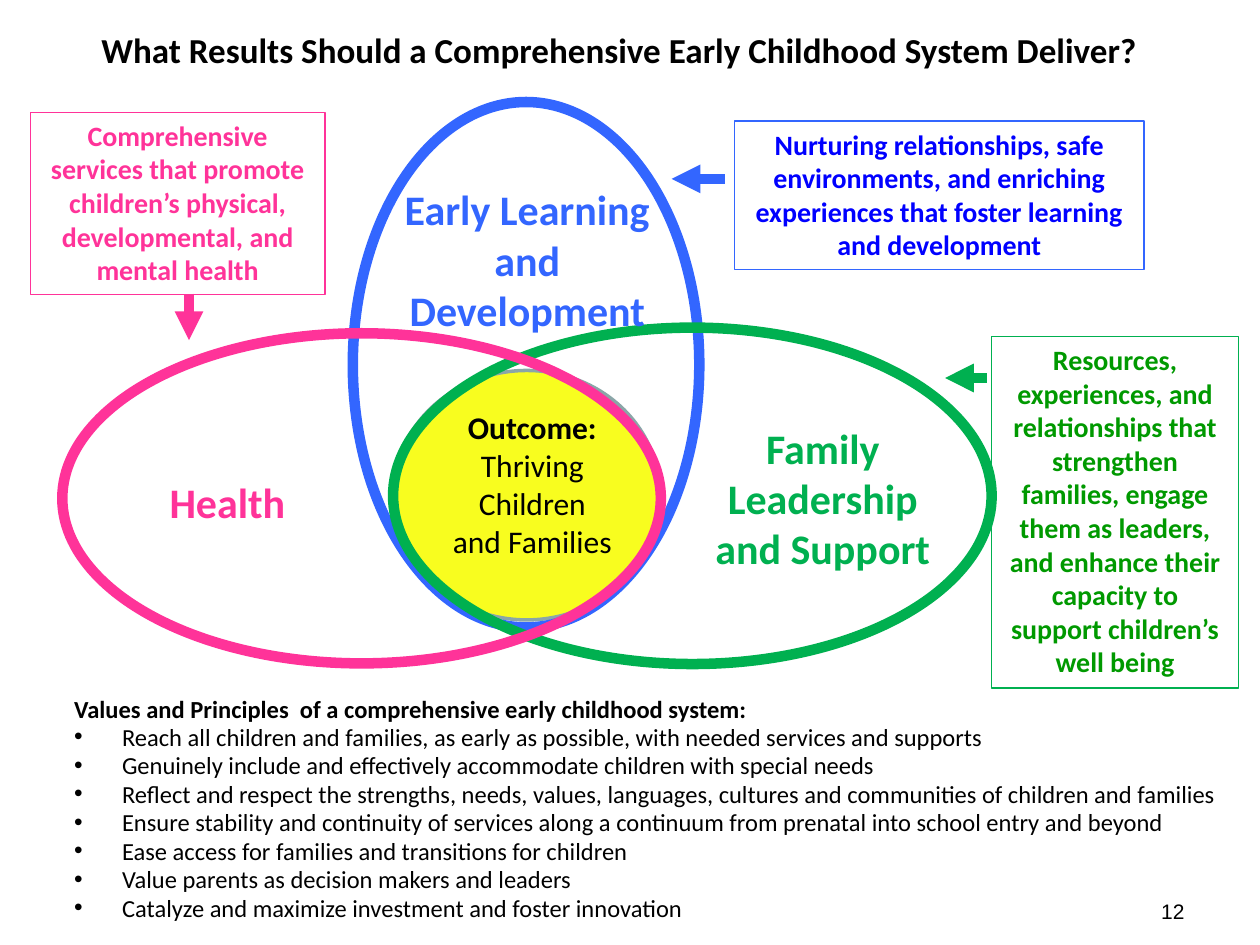
from lxml.etree import SubElement
from pptx import Presentation
from pptx.dml.color import RGBColor
from pptx.enum.shapes import MSO_CONNECTOR as Connector, MSO_SHAPE as Shape
from pptx.enum.text import MSO_ANCHOR as Anchor, PP_ALIGN as Align
from pptx.oxml.ns import qn
from pptx.util import Inches, Pt

COLORS = {
    "black": "000000", "pink": "FF3399", "blue": "3366FF", "green": "00B050",
    "deep blue": "0000FF", "deep green": "009900",
    "yellow": "F8FD1F", "gray": "8AA6A8",
}
PRINCIPLES = [
    "Reach all children and families, as early as possible, with needed services and supports",
    "Genuinely include and effectively accommodate children with special needs",
    "Reflect and respect the strengths, needs, values, languages, cultures and communities "
    "of children and families",
    "Ensure stability and continuity of services along a continuum from prenatal into "
    "school entry and beyond",
    "Ease access for families and transitions for children",
    "Value parents as decision makers and leaders",
    "Catalyze and maximize investment and foster innovation",
]


def rgb(name):
    return RGBColor.from_string(COLORS[name])


def inches(box):
    return [Inches(length) for length in box]


def write(shape, lines, size, color="black", bold=True, align=Align.CENTER,
          anchor=Anchor.TOP, font="Calibri"):
    """Fill a shape with one paragraph per line and return the paragraphs."""
    frame = shape.text_frame
    frame.word_wrap = True
    frame.vertical_anchor = anchor
    frame.text = "\n".join(lines)
    for para in frame.paragraphs:
        para.alignment = align
        para.font.name = font
        para.font.size = Pt(size)
        para.font.bold = bold
        para.font.color.rgb = rgb(color)
    return frame.paragraphs


def add_text(page, box, lines, size, **style):
    return write(page.shapes.add_textbox(*inches(box)), lines, size, **style)


def add_outline(page, kind, box, color, width, fill=None, rotation=0):
    shape = page.shapes.add_shape(kind, *inches(box))
    shape.shadow.inherit = False
    shape.rotation = rotation
    shape.line.color.rgb = rgb(color)
    shape.line.width = Pt(width)
    if fill:
        shape.fill.solid()
        shape.fill.fore_color.rgb = rgb(fill)
    else:
        shape.fill.background()
    return shape


def add_arrow(page, start, end, color):
    arrow = page.shapes.add_connector(Connector.STRAIGHT, *inches(start + end))
    arrow.line.color.rgb = rgb(color)
    arrow.line.width = Pt(5.5)
    SubElement(arrow.line._get_or_add_ln(), qn("a:tailEnd"), type="triangle")
    SubElement(arrow._element.spPr, qn("a:effectLst"))


def add_venn(page, left, top):
    """Three overlapping ellipses with their names and the shared outcome."""
    def at(x, y, width, height):
        return left + x, top + y, width, height

    add_outline(page, Shape.OVAL, at(2.63, 2.13, 2.12, 1.98), "gray", 2, fill="yellow")
    add_outline(page, Shape.OVAL, at(2.31, 0, 2.75, 4.17), "blue", 6)
    add_outline(page, Shape.OVAL, at(3.67, 0.75, 2.67, 4.75), "green", 6, rotation=270)
    add_outline(page, Shape.OVAL, at(1.07, 0.77, 2.62, 4.75), "pink", 6, rotation=270)
    for box, name, color in [
        (at(2.61, 0.6, 2.17, 1.31), "Early Learning and Development", "blue"),
        (at(0.23, 2.92, 2.17, 0.5), "Health", "pink"),
        (at(5, 2.49, 2.08, 1.31), "Family Leadership and Support", "green"),
    ]:
        add_text(page, box, [name], 24, color=color)
    outcome = add_text(page, at(1.96, 2.38, 3.55, 1.31),
                       ["Outcome:", "Thriving", "Children", "and Families"], 18, bold=False)
    outcome[0].font.bold = True


def add_callout(page, box, text, line, color, start, end):
    """A framed description with an arrow to its ellipse, offset from the box corner."""
    left, top = box[:2]
    frame = add_outline(page, Shape.RECTANGLE, box, line, 0.75)
    write(frame, [text], 16, color=color)
    add_arrow(page, (left + start[0], top + start[1]), (left + end[0], top + end[1]), line)


def add_principles(page, box):
    heading = "Values and Principles  of a comprehensive early childhood system:"
    paras = add_text(page, box, [heading] + PRINCIPLES, 14, bold=False, align=Align.LEFT)
    paras[0].font.bold = True
    for index, para in enumerate(paras):
        para.line_spacing = 0.8
        para.space_before = Pt(2.8)
        props = para._p.get_or_add_pPr()
        props.set("marL", str(Inches(0.38)))
        props.set("indent", str(-Inches(0.38)))
        if index:
            SubElement(props, qn("a:buFont"), typeface="Arial")
            SubElement(props, qn("a:buChar"), char="•")
            # The schema wants bullets ahead of the default run properties.
            default = props.find(qn("a:defRPr"))
            if default is not None:
                props.append(default)


def main():
    deck = Presentation()
    deck.slide_width, deck.slide_height = Inches(10), Inches(7.5)
    page = deck.slides.add_slide(deck.slide_layouts[6])

    add_text(page, (0, 0.13, 9.83, 0.53),
             ["What Results Should a Comprehensive Early Childhood System Deliver?"],
             20, anchor=Anchor.MIDDLE)
    add_principles(page, (0.49, 5.5, 9.29, 1.92))
    add_venn(page, 0.49, 0.81)
    add_callout(page, (0.24, 0.89, 2.34, 1.45),
                "Comprehensive services that promote children’s physical, developmental, "
                "and mental health",
                "pink", "pink", (1.26, 1.44), (1.26, 1.81))
    add_callout(page, (5.83, 0.96, 3.25, 1.18),
                "Nurturing relationships, safe environments, and enriching experiences "
                "that foster learning and development",
                "blue", "deep blue", (-0.08, 0.46), (-0.5, 0.46))
    add_callout(page, (7.87, 2.67, 1.96, 2.79),
                "Resources, experiences, and relationships that strengthen families, engage "
                "them as leaders, and enhance their capacity to support children’s well being",
                "green", "deep green", (-0.04, 0.33), (-0.37, 0.33))
    add_text(page, (7.17, 7.08, 2.33, 0.33), ["12"], 12,
             bold=False, align=Align.RIGHT, font="Arial")

    deck.save("out.pptx")


if __name__ == "__main__":
    main()
